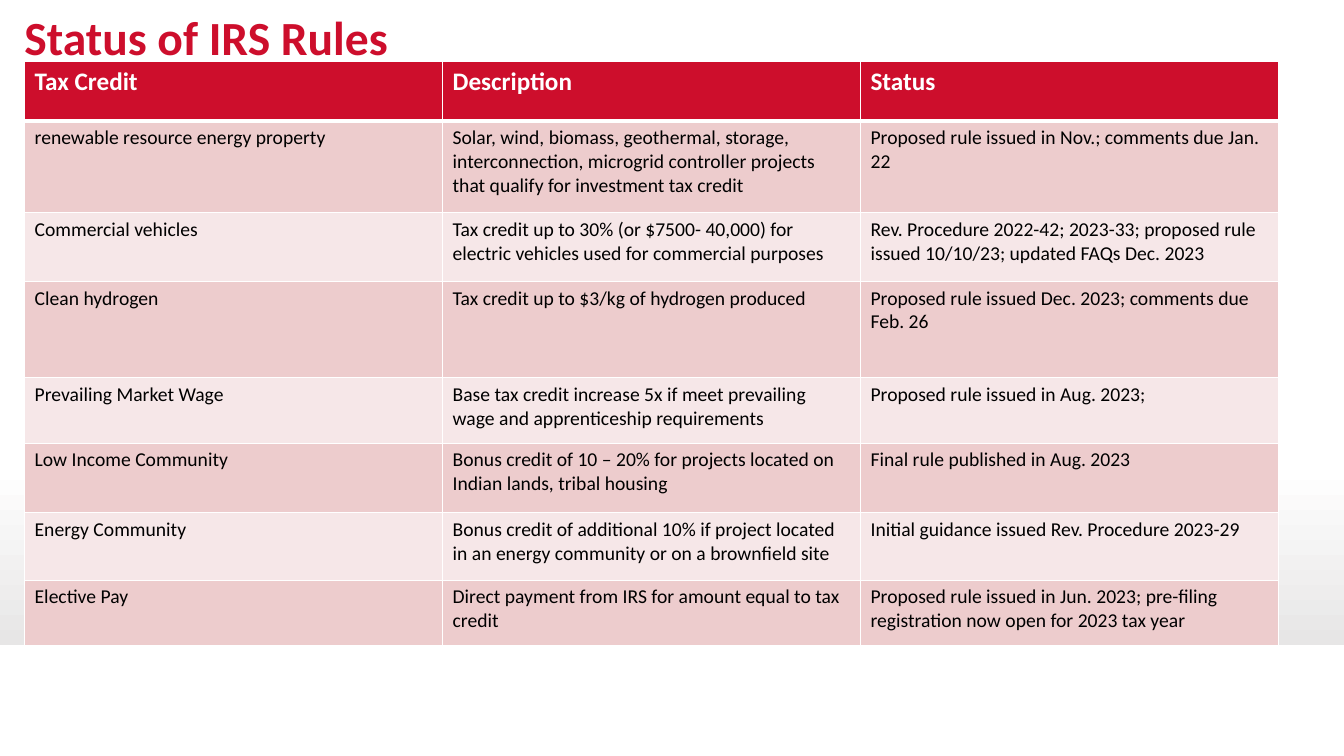
from dataclasses import dataclass

from lxml import etree
from pptx import Presentation
from pptx import util as u
from pptx.dml.color import RGBColor
from pptx.enum import shapes, text
from pptx.oxml.ns import qn


@dataclass(frozen=True)
class Theme:
    font: str = "Calibri"
    red: str = "CD0E2C"
    white: str = "FFFFFF"
    black: str = "000000"
    grey: str = "E7E6E6"
    bands: tuple = ("EDCCCD", "F6E7E8")
    title: int = 34
    head: int = 18
    body: int = 14
    thin: int = 1
    thick: int = 3


HEADS = ("Tax Credit", "Description", "Status")
RULES = (
    ("renewable resource energy property",
     "Solar, wind, biomass, geothermal, storage, interconnection, microgrid "
     "controller projects that qualify for investment tax credit",
     "Proposed rule issued in Nov.; comments due Jan. 22"),
    ("Commercial vehicles",
     "Tax credit up to 30% (or $7500- 40,000) for electric vehicles used for "
     "commercial purposes",
     "Rev. Procedure 2022-42; 2023-33; proposed rule issued 10/10/23; "
     "updated FAQs Dec. 2023"),
    ("Clean hydrogen",
     "Tax credit up to $3/kg of hydrogen produced",
     "Proposed rule issued Dec. 2023; comments due Feb. 26"),
    ("Prevailing Market Wage",
     "Base tax credit increase 5x if meet prevailing wage and apprenticeship "
     "requirements",
     "Proposed rule issued in Aug. 2023;"),
    ("Low Income Community",
     "Bonus credit of 10 – 20% for projects located on Indian lands, tribal "
     "housing",
     "Final rule published in Aug. 2023"),
    ("Energy Community",
     "Bonus credit of additional 10% if project located in an energy "
     "community or on a brownfield site",
     "Initial guidance issued Rev. Procedure 2023-29"),
    ("Elective Pay",
     "Direct payment from IRS for amount equal to tax credit",
     "Proposed rule issued in Jun. 2023; pre-filing registration now open "
     "for 2023 tax year"),
)
HEIGHTS = (1.5, 2.31, 1.73, 2.43, 1.65, 1.75, 1.7, 1.64)


def write(frame, words, font, size, color, bold=False, space=1.0):
    para = frame.paragraphs[0]
    para.alignment = text.PP_ALIGN.LEFT
    para.line_spacing = space
    run = para.add_run()
    run.text = words
    run.font.name = font
    run.font.size = u.Pt(size)
    run.font.bold = bold
    run.font.color.rgb = RGBColor.from_string(color)


class Deck:
    def __init__(self, theme):
        self.theme = theme
        self.prs = Presentation()
        self.prs.slide_width = u.Cm(33.87)
        self.prs.slide_height = u.Cm(19.05)
        self.slide = self.prs.slides.add_slide(self.prs.slide_layouts[5])

    def backdrop(self, height):
        tree = self.slide.shapes
        panel = tree.add_shape(shapes.MSO_SHAPE.RECTANGLE, 0, 0,
                               self.prs.slide_width, u.Cm(height))
        panel.shadow.inherit = False
        panel.line.fill.background()
        panel.fill.gradient()
        panel.fill.gradient_angle = 270
        fades = ((0.72, self.theme.white), (1, self.theme.grey))
        for stop, (place, color) in zip(panel.fill.gradient_stops, fades):
            stop.position = place
            stop.color.rgb = RGBColor.from_string(color)
        tree._spTree.insert(2, panel._element)

    def title(self, words, left, top, width, height):
        box = self.slide.shapes.title
        box.left, box.top = u.Cm(left), u.Cm(top)
        box.width, box.height = u.Cm(width), u.Cm(height)
        frame = box.text_frame
        frame.word_wrap = True
        frame.auto_size = text.MSO_AUTO_SIZE.NONE
        frame.vertical_anchor = text.MSO_ANCHOR.MIDDLE
        write(frame, words, self.theme.font, self.theme.title,
              self.theme.red, bold=True, space=0.9)

    def border(self, cell, side, width):
        props = cell._tc.get_or_add_tcPr()
        line = etree.SubElement(props, qn(f"a:ln{side}"), w=str(u.Pt(width)))
        fill = etree.SubElement(line, qn("a:solidFill"))
        etree.SubElement(fill, qn("a:srgbClr"), val=self.theme.white)

    def cell(self, cell, words, row):
        theme = self.theme
        head = row == 0
        thick = {(0, "B"), (1, "T")}
        for side in "LRTB":
            self.border(cell, side,
                        theme.thick if (row, side) in thick else theme.thin)
        cell.fill.solid()
        shade = theme.red if head else theme.bands[(row - 1) % 2]
        cell.fill.fore_color.rgb = RGBColor.from_string(shade)
        write(cell.text_frame, words, theme.font,
              theme.head if head else theme.body,
              theme.white if head else theme.black, bold=head)

    def table(self, rows, heights, left, top, width):
        count = len(rows[0])
        grid = self.slide.shapes.add_table(
            len(rows), count, u.Cm(left), u.Cm(top),
            u.Cm(width), u.Cm(sum(heights))).table
        for col in grid.columns:
            col.width = u.Cm(width / count)
        for row, (items, height) in enumerate(zip(rows, heights)):
            grid.rows[row].height = u.Cm(height)
            for col, words in enumerate(items):
                self.cell(grid.cell(row, col), words, row)


def main():
    deck = Deck(Theme())
    deck.backdrop(16.26)
    deck.title("Status of IRS Rules", 0.36, 0.1, 29.21, 1.83)
    deck.table((HEADS, *RULES), HEIGHTS, 0.62, 1.55, 31.6)
    deck.prs.save("out.pptx")


if __name__ == "__main__":
    main()
